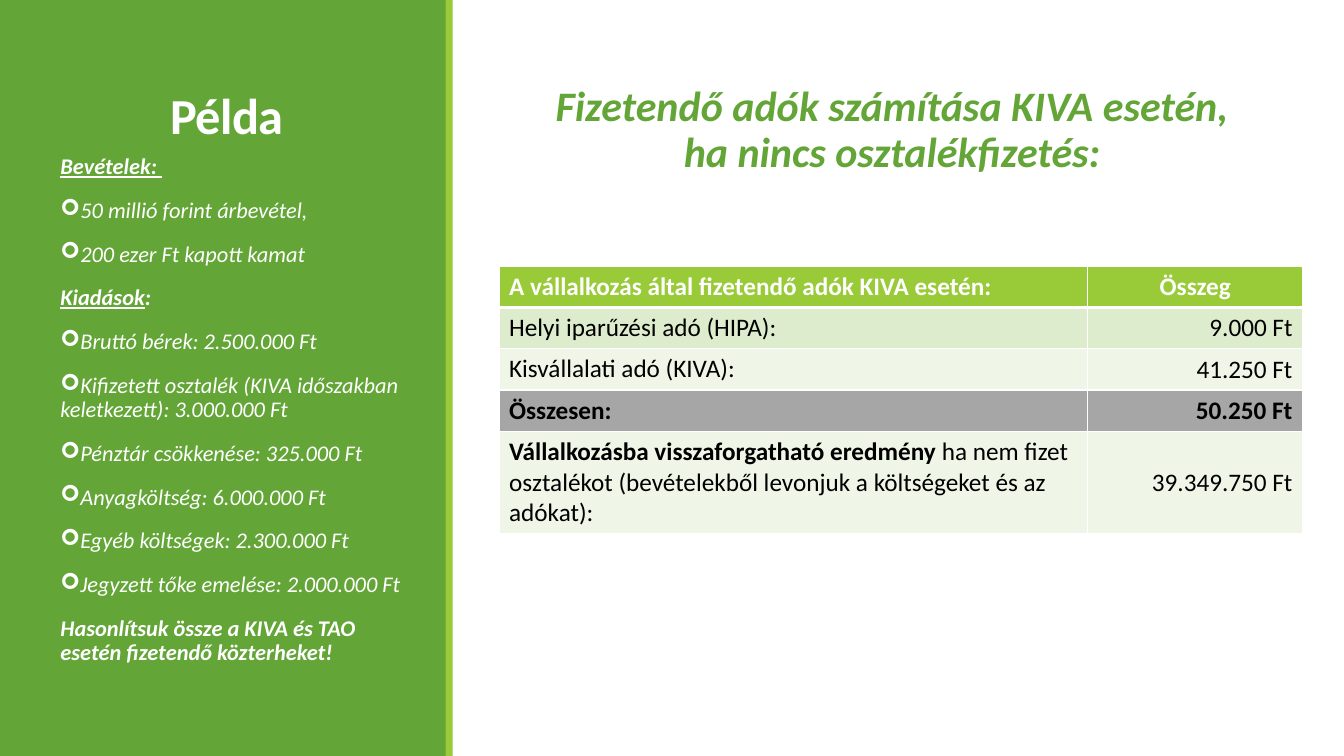
from lxml import etree
from pptx import Presentation
from pptx.dml.color import RGBColor
from pptx.enum.shapes import MSO_SHAPE
from pptx.enum.text import MSO_ANCHOR, MSO_AUTO_SIZE, PP_ALIGN
from pptx.oxml.ns import qn
from pptx.util import Inches, Pt

LEFT, CENTER, RIGHT = PP_ALIGN.LEFT, PP_ALIGN.CENTER, PP_ALIGN.RIGHT
TOP, MIDDLE, BOTTOM = MSO_ANCHOR.TOP, MSO_ANCHOR.MIDDLE, MSO_ANCHOR.BOTTOM

GREEN = RGBColor(0x63, 0xA5, 0x37)
LIME = RGBColor(0x99, 0xCB, 0x38)
PALE = RGBColor(0xDE, 0xEC, 0xCE)
PALEST = RGBColor(0xEF, 0xF6, 0xE8)
GREY = RGBColor(0xA6, 0xA6, 0xA6)
WHITE = RGBColor(0xFF, 0xFF, 0xFF)
BLACK = RGBColor(0, 0, 0)


def write(para, text, size=18, color=WHITE, bold=False, italic=False, underline=False):
    span = para.add_run()
    span.text = text
    font = span.font
    font.name, font.size, font.color.rgb = "Calibri", Pt(size), color
    font.bold, font.italic, font.underline = bold, italic, underline
    return span


def set_list_style(para, bullet=None, color=WHITE, indent=0):
    """Set the spacing of a body paragraph, its hanging indent and its bullet."""
    para.line_spacing, para.space_before, para.space_after = 0.9, Pt(12), Pt(2)
    props = para._p.get_or_add_pPr()
    props.set("marL", str(Inches(indent)))
    props.set("indent", str(-Inches(indent)))
    if bullet is None:
        etree.SubElement(props, qn("a:buNone"))
        return
    bullet_color = etree.SubElement(props, qn("a:buClr"))
    etree.SubElement(bullet_color, qn("a:srgbClr"), val=str(color))
    etree.SubElement(props, qn("a:buFont"), typeface="Wingdings" if bullet == "➢" else "Calibri")
    etree.SubElement(props, qn("a:buChar"), char=bullet)


deck = Presentation()
deck.slide_width, deck.slide_height = Inches(13.33), Inches(7.5)
page = deck.slides.add_slide(deck.slide_layouts.get_by_name("Content with Caption"))
title, heading, details = page.placeholders

# Side panel, behind the text
for position, (left, width, color) in enumerate([(0, 4.43, GREEN), (4.42, 0.07, LIME)]):
    panel = page.shapes.add_shape(
        MSO_SHAPE.RECTANGLE, Inches(left), 0, Inches(width), Inches(7.5))
    panel.shadow.inherit = False
    panel.fill.solid()
    panel.fill.fore_color.rgb = color
    panel.line.fill.background()
    page.shapes._spTree.insert(2 + position, panel._element)

# Placeholders
for box, area, anchor in [
    (title, (0.5, 0.65, 3.5, 0.84), BOTTOM),
    (heading, (5.25, 0.8, 7.1, 5.75), TOP),
    (details, (0.5, 1.49, 3.71, 5.4), TOP),
]:
    box.left, box.top, box.width, box.height = map(Inches, area)
    box.text_frame.word_wrap = True
    box.text_frame.auto_size = MSO_AUTO_SIZE.NONE
    box.text_frame.vertical_anchor = anchor

para = title.text_frame.paragraphs[0]
para.alignment, para.line_spacing = CENTER, 0.85
span = write(para, "Példa", size=36, bold=True)
span.font._element.set("spc", "-50")

heading.text_frame.margin_left = heading.text_frame.margin_right = 0
para = heading.text_frame.paragraphs[0]
para.alignment = CENTER
set_list_style(para, bullet=" ", color=LIME, indent=0.1)
write(para, "Fizetendő adók számítása KIVA esetén, ha nincs osztalékfizetés:",
      size=30, color=GREEN, bold=True, italic=True)

# Each group: underlined label, its plain ending, and the bulleted items
groups = [
    ("Bevételek: ", "", ["50 millió forint árbevétel,", "200 ezer Ft kapott kamat"]),
    ("Kiadások", ":", [
        "Bruttó bérek: 2.500.000 Ft",
        "Kifizetett osztalék (KIVA időszakban keletkezett): 3.000.000 Ft",
        "Pénztár csökkenése: 325.000 Ft",
        "Anyagköltség: 6.000.000 Ft",
        "Egyéb költségek: 2.300.000 Ft",
        "Jegyzett tőke emelése: 2.000.000 Ft",
    ]),
]
para = details.text_frame.paragraphs[0]
for label, ending, items in groups:
    set_list_style(para)
    write(para, label, size=16, bold=True, italic=True, underline=True)
    if ending:
        write(para, ending, size=16, bold=True, italic=True)
    for item in items:
        para = details.text_frame.add_paragraph()
        set_list_style(para, bullet="➢")
        write(para, item, size=16, italic=True)
    para = details.text_frame.add_paragraph()
set_list_style(para)
write(para, "Hasonlítsuk össze a KIVA és TAO esetén fizetendő közterheket!",
      size=16, bold=True, italic=True)

# Tax table: bold label, plain label, amount, fill, text colour, amount alignment
rows = [
    ("A vállalkozás által fizetendő adók KIVA esetén:", "", "Összeg", LIME, WHITE, CENTER),
    ("", "Helyi iparűzési adó (HIPA):", "9.000 Ft", PALE, BLACK, RIGHT),
    ("", "Kisvállalati adó (KIVA):", "41.250 Ft", PALEST, BLACK, RIGHT),
    ("Összesen:", "", "50.250 Ft", GREY, BLACK, RIGHT),
    ("Vállalkozásba visszaforgatható eredmény ",
     "ha nem fizet osztalékot (bevételekből levonjuk a költségeket és az adókat):",
     "39.349.750 Ft", PALEST, BLACK, RIGHT),
]
table = page.shapes.add_table(
    len(rows), 2, Inches(4.95), Inches(2.64), Inches(7.97), Inches(2.65)).table
table.columns[0].width, table.columns[1].width = Inches(5.84), Inches(2.13)

for index, (strong, plain, amount, fill, color, amount_alignment) in enumerate(rows):
    table.rows[index].height = Inches(1.01 if index == len(rows) - 1 else 0.41)
    label_cell, amount_cell = table.cell(index, 0), table.cell(index, 1)
    for cell, alignment in [(label_cell, LEFT), (amount_cell, amount_alignment)]:
        props = cell._tc.get_or_add_tcPr()
        for side in ("lnL", "lnR", "lnT", "lnB"):
            under_header = (index, side) in [(0, "lnB"), (1, "lnT")]
            border = etree.SubElement(
                props, qn(f"a:{side}"), w=str(Pt(3 if under_header else 1)))
            line_fill = etree.SubElement(border, qn("a:solidFill"))
            etree.SubElement(line_fill, qn("a:srgbClr"), val=str(WHITE))
        cell.fill.solid()
        cell.fill.fore_color.rgb = fill
        cell.text_frame.paragraphs[0].alignment = alignment
    amount_cell.vertical_anchor = MIDDLE
    for text, bold in [(strong, True), (plain, False)]:
        if text:
            write(label_cell.text_frame.paragraphs[0], text, color=color, bold=bold)
    write(amount_cell.text_frame.paragraphs[0], amount, color=color, bold=not plain)

deck.save("out.pptx")
